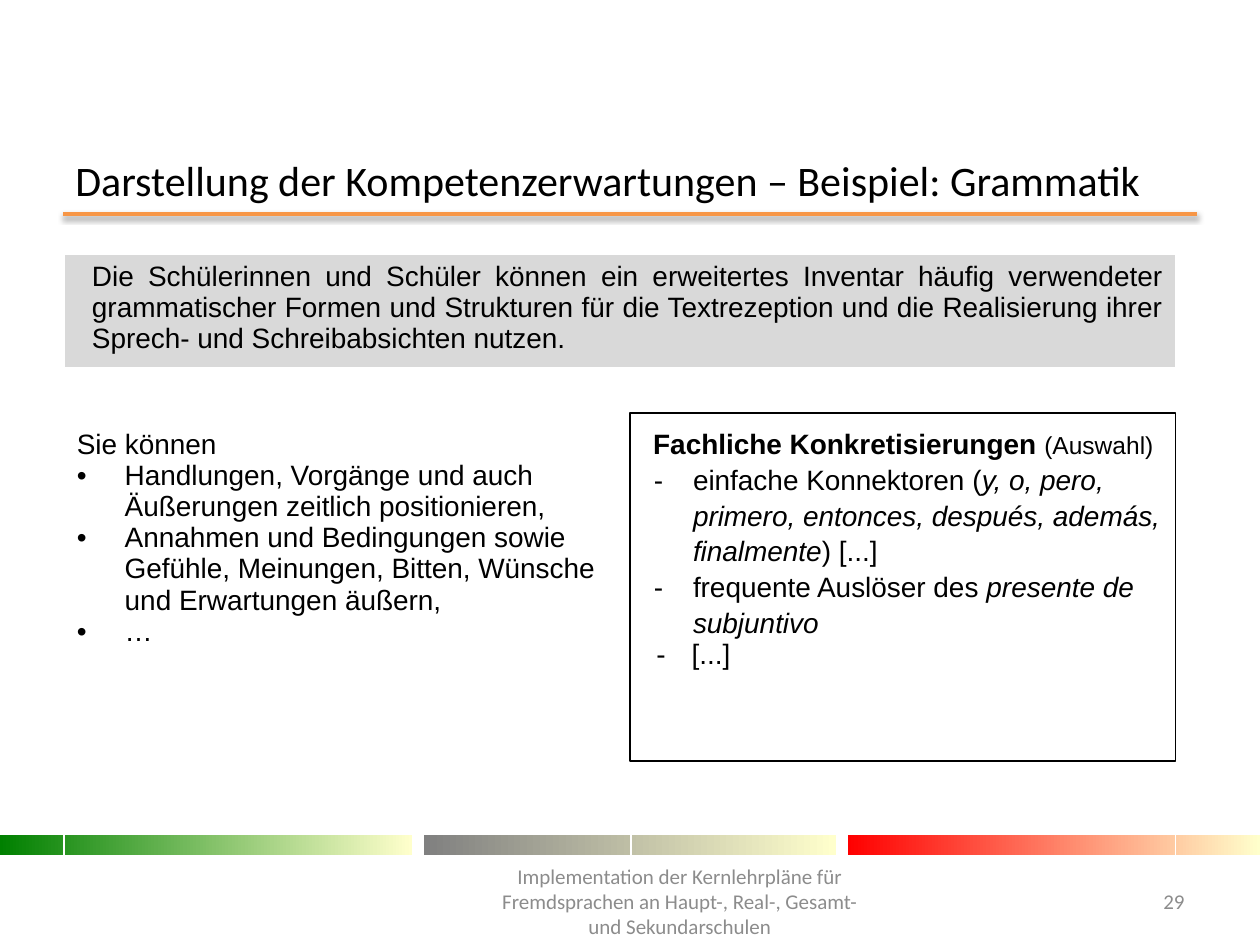
from dataclasses import dataclass

from lxml import etree
from pptx import Presentation
from pptx.dml.color import RGBColor
from pptx.enum.shapes import MSO_CONNECTOR, MSO_SHAPE
from pptx.enum.text import MSO_ANCHOR, PP_ALIGN
from pptx.oxml.ns import qn
from pptx.util import Inches, Pt


@dataclass(frozen=True)
class Theme:
    heading_font: str = "Calibri"
    body_font: str = "Arial"
    title_size: int = 24
    body_size: int = 16
    note_size: int = 14
    footer_size: int = 12
    ink: str = "000000"
    muted: str = "8C8C8C"
    rule: str = "F79646"
    panel: str = "D9D9D9"
    paper: str = "FFFFFF"
    band_end: str = "FFFFCC"
    band_starts: tuple = ("008000", "808080", "FF0000")


THEME = Theme()
rgb = RGBColor.from_string


def set_font(font, face, size, color):
    font.name, font.size = face, Pt(size)
    font.color.rgb = rgb(color)


def add_label(slide, box, text, size, color, align):
    label = slide.shapes.add_textbox(*map(Inches, box)).text_frame
    label.word_wrap = True
    label.vertical_anchor = MSO_ANCHOR.MIDDLE
    paragraph = label.paragraphs[0]
    paragraph.text = text
    paragraph.alignment = align
    set_font(paragraph.font, THEME.heading_font, size, color)


def write_paragraph(paragraph, runs, indent=(0, 0), bullet=None, spacing=None, align=None):
    """Runs are (text, style) pairs; style holds font attributes that differ."""
    props = paragraph._p.get_or_add_pPr()
    props.set("marL", str(Inches(indent[0])))
    props.set("indent", str(Inches(indent[1])))
    if bullet:
        etree.SubElement(props, qn("a:buFont")).set("typeface", THEME.body_font)
        etree.SubElement(props, qn("a:buChar")).set("char", bullet)
    set_font(paragraph.font, THEME.body_font, THEME.body_size, THEME.ink)
    if spacing:
        paragraph.line_spacing = spacing
    if align is not None:
        paragraph.alignment = align
    for text, style in runs:
        run = paragraph.add_run()
        run.text = text
        for attribute, value in style.items():
            setattr(run.font, attribute, value)


def fill_cell(cell, paragraphs, color=None):
    if color:
        cell.fill.solid()
        cell.fill.fore_color.rgb = rgb(color)
    else:
        cell.fill.background()
    frame = cell.text_frame
    for index, options in enumerate(paragraphs):
        paragraph = frame.add_paragraph() if index else frame.paragraphs[0]
        write_paragraph(paragraph, **options)


def add_header(slide, box):
    left, top, width, height = box
    add_label(slide, box, "Darstellung der Kompetenzerwartungen – Beispiel: Grammatik",
              THEME.title_size, THEME.ink, PP_ALIGN.LEFT)
    # Rule with a soft shadow below the title
    rule_y = Inches(top + height + 0.08)
    rule = slide.shapes.add_connector(MSO_CONNECTOR.STRAIGHT, Inches(left), rule_y,
                                      Inches(left + width), rule_y)
    rule.line.color.rgb = rgb(THEME.rule)
    rule.line.width = Pt(2)
    effects = etree.SubElement(rule._element.spPr, qn("a:effectLst"))
    shadow = etree.SubElement(effects, qn("a:outerShdw"), blurRad=str(Pt(3.1)),
                              dist=str(Pt(1.6)), dir="5400000", rotWithShape="0")
    shade = etree.SubElement(shadow, qn("a:srgbClr"), val=THEME.ink)
    etree.SubElement(shade, qn("a:alpha"), val="38000")


def add_competences(slide, box):
    left, top, width, height = box
    column_widths = (4.5, width - 4.5)
    row_heights = (0.84, 0.4, height - 1.24)
    table = slide.shapes.add_table(3, 2, *map(Inches, box)).table
    table.first_row = table.horz_banding = False
    for column, size in zip(table.columns, column_widths):
        column.width = Inches(size)
    for row, size in zip(table.rows, row_heights):
        row.height = Inches(size)
    for row in range(2):
        table.cell(row, 0).merge(table.cell(row, 1))

    # Overall expectation and spacer row
    expectation = (
        "Die Schülerinnen und Schüler können ein erweitertes Inventar häufig verwendeter "
        "grammatischer Formen und Strukturen für die Textrezeption und die Realisierung "
        "ihrer Sprech- und Schreibabsichten nutzen.")
    fill_cell(table.cell(0, 0), [dict(runs=[(expectation, {})], indent=(0.12, 0),
                                      align=PP_ALIGN.JUSTIFY)], THEME.panel)
    fill_cell(table.cell(1, 0), [], THEME.paper)

    # Abilities
    abilities = (
        "Handlungen, Vorgänge und auch Äußerungen zeitlich positionieren,",
        "Annahmen und Bedingungen sowie Gefühle, Meinungen, Bitten, Wünsche "
        "und Erwartungen äußern,",
        "…")
    fill_cell(table.cell(2, 0), [dict(runs=[("Sie können", {})], spacing=1.15)] + [
        dict(runs=[(ability, {})], indent=(0.38, -0.38), bullet="•")
        for ability in abilities])

    # Subject details
    italic = {"italic": True}
    dashed = dict(indent=(0.39, -0.31), bullet="-", spacing=1.15)
    fill_cell(table.cell(2, 1), [
        dict(runs=[("Fachliche Konkretisierungen ", {"bold": True}),
                   ("(Auswahl)", {"size": Pt(THEME.note_size)})],
             spacing=1.15, align=PP_ALIGN.CENTER),
        dict(runs=[("einfache Konnektoren (", {}),
                   ("y, o, pero, primero, entonces, después, además, finalmente", italic),
                   (") [...]", {})], **dashed),
        dict(runs=[("frequente Auslöser des ", {}), ("presente de subjuntivo", italic)],
             **dashed),
        dict(runs=[("[...]", {})], indent=(0.38, -0.28), bullet="-"),
    ])

    # Frame around the subject details
    frame_top = top + sum(row_heights[:2]) + 0.02
    frame = slide.shapes.add_shape(
        MSO_SHAPE.RECTANGLE, Inches(left + column_widths[0] - 0.01), Inches(frame_top),
        Inches(column_widths[1] + 0.01), Inches(2.76))
    frame.shadow.inherit = False
    frame.fill.background()
    frame.line.color.rgb = rgb(THEME.ink)
    frame.line.width = Pt(1)


def add_footer(slide, box):
    left, top, width, height = box
    # Three gradient bands
    band_width = 3.27
    step = (width - band_width) / (len(THEME.band_starts) - 1)
    for index, start in enumerate(THEME.band_starts):
        band = slide.shapes.add_shape(
            MSO_SHAPE.RECTANGLE, Inches(left + index * step), Inches(top),
            Inches(band_width), Inches(0.16))
        band.shadow.inherit = False
        band.line.fill.background()
        band.fill.gradient()
        band.fill.gradient_angle = 0
        for stop, color in zip(band.fill.gradient_stops, (start, THEME.band_end)):
            stop.color.rgb = rgb(color)
    # Footer line and slide number
    line_top = top + 0.32
    add_label(slide, (left + 3.82, line_top, 3.15, 0.4),
              "Implementation der Kernlehrpläne für Fremdsprachen an Haupt-, Real-, "
              "Gesamt- und Sekundarschulen",
              THEME.footer_size, THEME.muted, PP_ALIGN.CENTER)
    add_label(slide, (left + width - 1.14, line_top, 0.64, 0.4), "29",
              THEME.footer_size, THEME.muted, PP_ALIGN.RIGHT)


def main():
    deck = Presentation()
    deck.slide_width, deck.slide_height = Inches(10), Inches(7.5)
    slide = deck.slides.add_slide(deck.slide_layouts[6])
    add_footer(slide, (0, 6.63, 10, 0.87))
    add_header(slide, (0.5, 1.23, 9, 0.39))
    add_competences(slide, (0.51, 2.02, 8.82, 4.98))
    deck.save("out.pptx")


if __name__ == "__main__":
    main()
